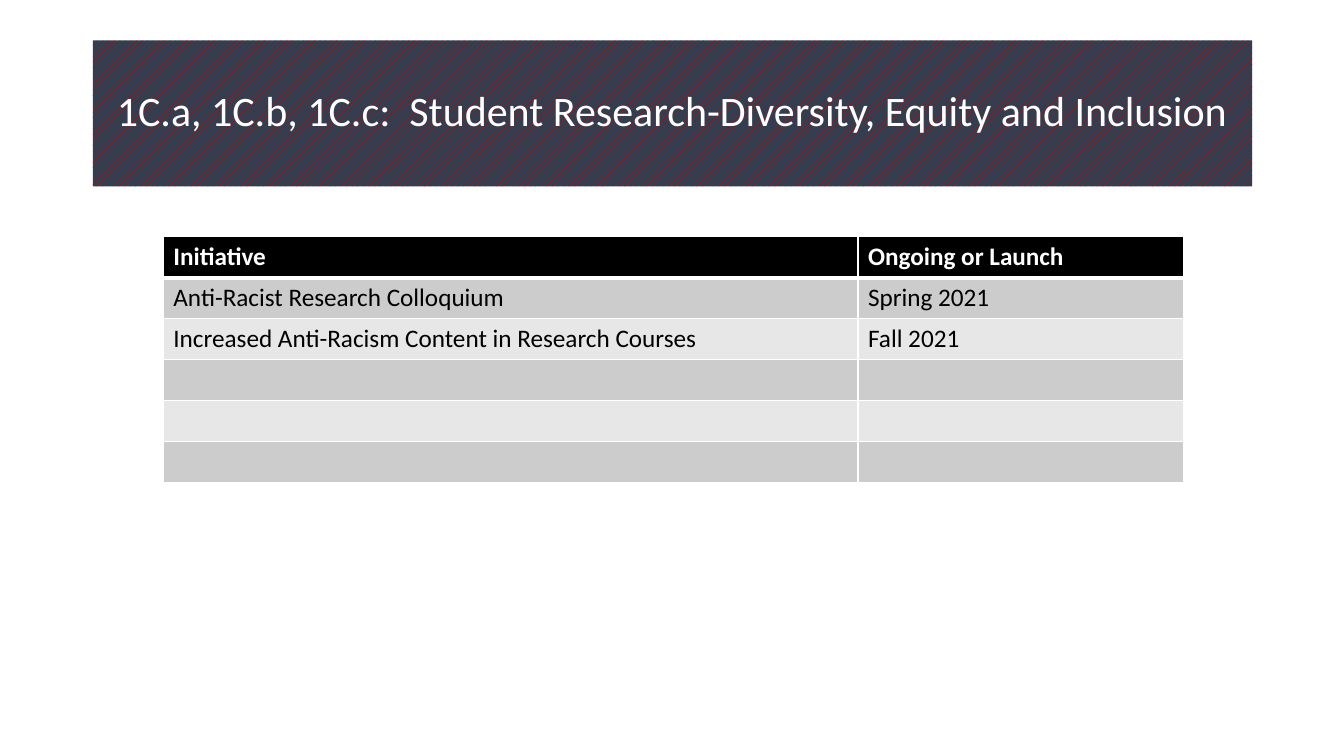
from lxml import etree
from pptx import Presentation
from pptx.dml.color import RGBColor
from pptx.enum.dml import MSO_PATTERN
from pptx.enum.text import MSO_ANCHOR, MSO_AUTO_SIZE, PP_ALIGN
from pptx.oxml.ns import qn
from pptx.util import Inches, Pt

STRIPES = MSO_PATTERN.WIDE_UPWARD_DIAGONAL
MIDDLE = MSO_ANCHOR.MIDDLE
NO_AUTOFIT = MSO_AUTO_SIZE.NONE
CENTER = PP_ALIGN.CENTER
TITLE_ONLY = 5

TITLE = "1C.a, 1C.b, 1C.c:  Student Research-Diversity, Equity and Inclusion"
INITIATIVES = [
    ("Initiative", "Ongoing or Launch"),
    ("Anti-Racist Research Colloquium", "Spring 2021"),
    ("Increased Anti-Racism Content in Research Courses", "Fall 2021"),
    ("", ""),
    ("", ""),
    ("", ""),
]
COLUMN_WIDTHS = (6.89, 3.23)
ROW_HEIGHT = 0.405
HEADER_FILL = "000000"
BAND_FILLS = ("CCCCCC", "E7E7E7")
TITLE_FORMAT = {"name": "Calibri", "size": Pt(30)}
HEADER_FORMAT = {"name": "Calibri", "size": Pt(18), "bold": True}
BODY_FORMAT = {"name": "Calibri", "size": Pt(18), "bold": False}


def color(value):
    return RGBColor.from_string(value)


def format_font(font, values, hex_color):
    for name, value in values.items():
        setattr(font, name, value)
    font.color.rgb = color(hex_color)


def add_borders(cell, widths):
    properties = cell._tc.get_or_add_tcPr()
    for side, width in widths.items():
        line = etree.SubElement(properties, qn(f"a:ln{side}"), w=str(Pt(width)))
        fill = etree.SubElement(line, qn("a:solidFill"))
        etree.SubElement(fill, qn("a:srgbClr"), val="FFFFFF")


def add_title(slide):
    title = slide.shapes.title
    title.left, title.top = Inches(0.92), Inches(0.4)
    title.width, title.height = Inches(11.5), Inches(1.45)
    title.fill.patterned()
    title.fill.pattern = STRIPES
    title.fill.fore_color.rgb = color("C00000")
    title.fill.back_color.rgb = color("333F50")
    frame = title.text_frame
    frame.text = TITLE
    frame.word_wrap = True
    frame.auto_size = NO_AUTOFIT
    frame.vertical_anchor = MIDDLE
    paragraph = frame.paragraphs[0]
    paragraph.alignment = CENTER
    paragraph.line_spacing = 0.9
    format_font(paragraph.runs[0].font, TITLE_FORMAT, "FFFFFF")


def add_initiatives(slide):
    row_count = len(INITIATIVES)
    table = slide.shapes.add_table(
        row_count, len(COLUMN_WIDTHS), Inches(1.62), Inches(2.35),
        Inches(sum(COLUMN_WIDTHS)), Inches(ROW_HEIGHT * row_count),
    ).table
    for column, width in zip(table.columns, COLUMN_WIDTHS):
        column.width = Inches(width)
    for row_index, texts in enumerate(INITIATIVES):
        is_header = row_index == 0
        table.rows[row_index].height = Inches(ROW_HEIGHT)
        fill = HEADER_FILL if is_header else BAND_FILLS[(row_index - 1) % 2]
        values = HEADER_FORMAT if is_header else BODY_FORMAT
        text_color = "FFFFFF" if is_header else "000000"
        widths = {"L": 1, "R": 1, "T": 3 if row_index == 1 else 1, "B": 3 if is_header else 1}
        for column_index, text in enumerate(texts):
            cell = table.cell(row_index, column_index)
            add_borders(cell, widths)
            cell.fill.solid()
            cell.fill.fore_color.rgb = color(fill)
            if text:
                cell.text = text
                format_font(cell.text_frame.paragraphs[0].runs[0].font, values, text_color)


def main():
    presentation = Presentation()
    presentation.slide_width = Inches(13.33)
    presentation.slide_height = Inches(7.5)
    slide = presentation.slides.add_slide(presentation.slide_layouts[TITLE_ONLY])
    add_title(slide)
    add_initiatives(slide)
    presentation.save("out.pptx")


if __name__ == "__main__":
    main()
